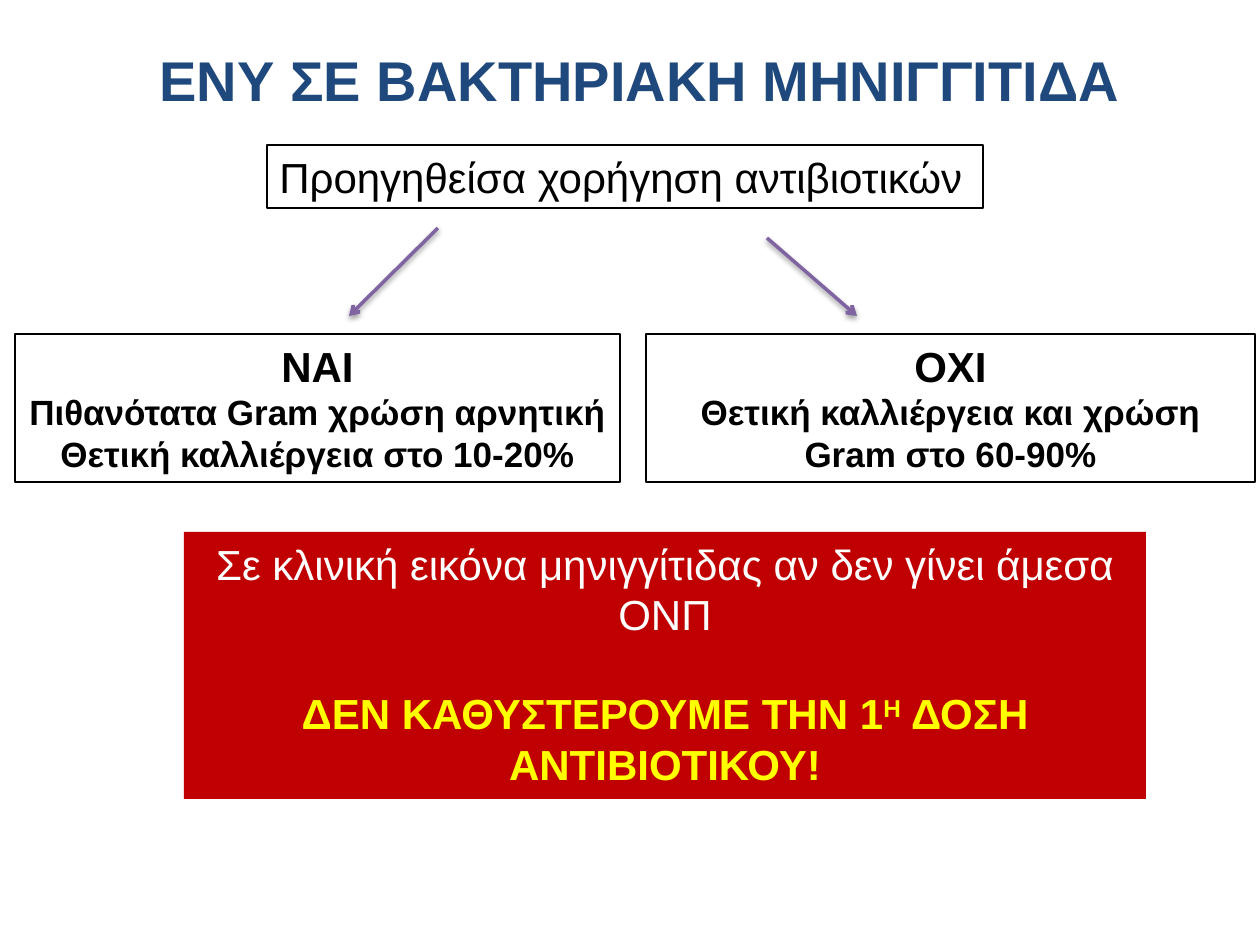
from lxml.etree import SubElement
from pptx import Presentation
from pptx.dml.color import RGBColor
from pptx.enum.shapes import MSO_CONNECTOR, MSO_SHAPE
from pptx.enum.text import MSO_ANCHOR, PP_ALIGN
from pptx.oxml import parse_xml
from pptx.oxml.ns import nsdecls, qn
from pptx.util import Pt

EMU_PER_PX = 914400 / 126
COLORS = {
    "title": "1F497D",
    "text": "000000",
    "arrow": "8064A2",
    "alert": "C00000",
    "alert_text": "FFFFFF",
    "alert_strong": "FFFF00",
}
SHADOW = (
    f'<a:effectLst {nsdecls("a")}>'
    '<a:outerShdw blurRad="40000" dist="20000" dir="5400000" rotWithShape="0">'
    '<a:srgbClr val="000000"><a:alpha val="38000"/></a:srgbClr>'
    "</a:outerShdw></a:effectLst>"
)


def emu(*pixels):
    return [round(value * EMU_PER_PX) for value in pixels]


def add_box(page, bounds, lines, align=PP_ALIGN.CENTER, fill=None, line=None):
    """Add a rectangle with one paragraph per (text, size, bold, color) line."""
    box = page.shapes.add_shape(MSO_SHAPE.RECTANGLE, *emu(*bounds))
    box.shadow.inherit = False
    if fill:
        box.fill.solid()
        box.fill.fore_color.rgb = RGBColor.from_string(COLORS[fill])
    else:
        box.fill.background()
    if line:
        box.line.color.rgb = RGBColor.from_string(COLORS[line])
        box.line.width = Pt(0.75)
    else:
        box.line.fill.background()
    frame = box.text_frame
    frame.word_wrap = True
    frame.vertical_anchor = MSO_ANCHOR.TOP
    for index, (text, size, bold, color) in enumerate(lines):
        para = frame.add_paragraph() if index else frame.paragraphs[0]
        para.text = text
        para.alignment = align
        para.font.name = "Arial"
        para.font.size = Pt(size)
        para.font.bold = bold
        para.font.color.rgb = RGBColor.from_string(COLORS[color])
    return box


deck = Presentation()
deck.slide_width, deck.slide_height = emu(1260, 945)
page = deck.slides.add_slide(deck.slide_layouts[6])

title = add_box(page, (20, 29, 1240, 100),
                [("ΕΝΥ ΣΕ ΒΑΚΤΗΡΙΑΚΗ ΜΗΝΙΓΓΙΤΙΔΑ", 32, True, "title")])
title.text_frame.vertical_anchor = MSO_ANCHOR.MIDDLE

# Arrows from the question to its two answers
for ends in [(767, 238, 857, 316), (438, 228, 349, 316)]:
    arrow = page.shapes.add_connector(MSO_CONNECTOR.STRAIGHT, *emu(*ends))
    arrow.line.color.rgb = RGBColor.from_string(COLORS["arrow"])
    arrow.line.width = Pt(2)
    SubElement(arrow.line._get_or_add_ln(), qn("a:tailEnd"), type="arrow")
    arrow._element.spPr.append(parse_xml(SHADOW))

add_box(page, (267, 145, 716, 63),
        [("Προηγηθείσα χορήγηση αντιβιοτικών", 24, False, "text")],
        align=PP_ALIGN.LEFT, line="text")

answers = [
    (15, 605, ["ΝΑΙ", "Πιθανότατα Gram χρώση αρνητική", "Θετική καλλιέργεια στο 10-20%"]),
    (646, 609, ["ΟΧΙ", "Θετική καλλιέργεια και χρώση Gram στο 60-90%"]),
]
for left, width, (answer, *findings) in answers:
    lines = [(answer, 24, True, "text")]
    lines += [(finding, 20, True, "text") for finding in findings]
    add_box(page, (left, 334, width, 148), lines, line="text")

alert = add_box(page, (184, 532, 962, 267), [
    ("Σε κλινική εικόνα μηνιγγίτιδας αν δεν γίνει άμεσα ΟΝΠ", 24, False, "alert_text"),
    ("ΔΕΝ ΚΑΘΥΣΤΕΡΟΥΜΕ ΤΗΝ 1", 24, True, "alert_strong"),
], fill="alert")
warning = alert.text_frame.paragraphs[1]
warning.space_before = Pt(28)
ordinal = warning.add_run()
ordinal.text = "Η"
ordinal._r.get_or_add_rPr().set("baseline", "30000")
span = warning.add_run()
span.text = " ΔΟΣΗ ΑΝΤΙΒΙΟΤΙΚΟΥ!"

deck.save("out.pptx")
